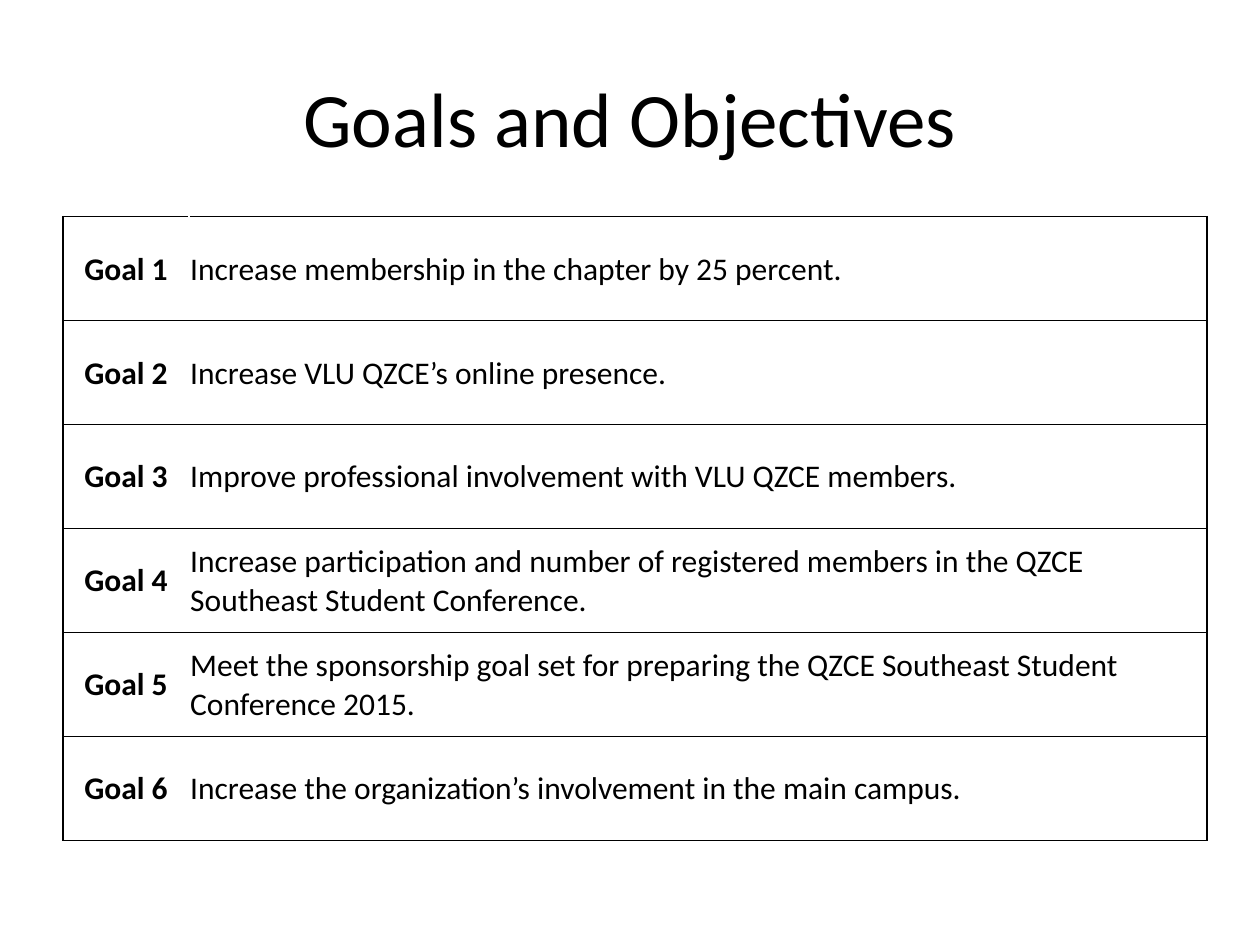
from lxml import etree
from pptx import Presentation
from pptx import util as u
from pptx.dml import color
from pptx.enum import text
from pptx.oxml import ns

COLORS = {"ink": "000000", "paper": "FFFFFF"}
FONT = "Calibri"
GOALS = [
    "Increase membership in the chapter by 25 percent.",
    "Increase VLU QZCE’s online presence.",
    "Improve professional involvement with VLU QZCE members.",
    "Increase participation and number of registered members in the QZCE Southeast Student Conference.",
    "Meet the sponsorship goal set for preparing the QZCE Southeast Student Conference 2015.",
    "Increase the organization’s involvement in the main campus.",
]
LABEL_WIDTH = 1
MARGINS = {
    "margin_left": u.Inches(0.01),
    "margin_right": u.Inches(0.01),
    "margin_top": u.Inches(0.01),
    "margin_bottom": 0,
    "vertical_anchor": text.MSO_ANCHOR.MIDDLE,
}
LABEL_EDGES = {"lnL": "ink", "lnR": "paper", "lnT": "ink", "lnB": "ink"}
GOAL_EDGES = {"lnL": "paper", "lnR": "ink", "lnT": "ink", "lnB": "ink"}


def set_values(target, values):
    for name, value in values.items():
        setattr(target, name, value)


def write_text(frame, words, size, align, bold=False):
    para = frame.paragraphs[0]
    para.alignment = align
    span = para.add_run()
    span.text = words
    set_values(span.font, {"name": FONT, "size": u.Pt(size), "bold": bold})
    span.font.color.rgb = color.RGBColor.from_string(COLORS["ink"])


def set_edges(cell, edges):
    properties = cell._tc.get_or_add_tcPr()
    for side, shade in edges.items():
        line = etree.SubElement(properties, ns.qn(f"a:{side}"), w=str(u.Pt(1)))
        fill = etree.SubElement(line, ns.qn("a:solidFill"))
        etree.SubElement(fill, ns.qn("a:srgbClr"), val=COLORS[shade])


def fill_cell(cell, words, align, bold, edges):
    set_values(cell, MARGINS)
    set_edges(cell, edges)
    cell.fill.solid()
    cell.fill.fore_color.rgb = color.RGBColor.from_string(COLORS["paper"])
    write_text(cell.text_frame, words, 18, align, bold)


def place_title(page, box):
    title = page.shapes.title
    set_values(title, dict(zip(("left", "top", "width", "height"), map(u.Inches, box))))
    title.text_frame.vertical_anchor = text.MSO_ANCHOR.MIDDLE
    write_text(title.text_frame, "Goals and Objectives", 44, text.PP_ALIGN.CENTER)


def place_goals(page, box):
    width, height = box[2:]
    table = page.shapes.add_table(len(GOALS), 2, *map(u.Inches, box)).table
    set_values(table, {"first_row": False, "horz_banding": False})
    for column, size in zip(table.columns, (LABEL_WIDTH, width - LABEL_WIDTH)):
        column.width = u.Inches(size)
    for number, (row, goal) in enumerate(zip(table.rows, GOALS), 1):
        row.height = u.Inches(height / len(GOALS))
        label_cell, goal_cell = row.cells
        fill_cell(label_cell, f"Goal {number}", text.PP_ALIGN.CENTER, True, LABEL_EDGES)
        fill_cell(goal_cell, goal, text.PP_ALIGN.LEFT, False, GOAL_EDGES)


def main():
    deck = Presentation()
    set_values(deck, {"slide_width": u.Inches(10), "slide_height": u.Inches(7.5)})
    page = deck.slides.add_slide(deck.slide_layouts.get_by_name("Title Only"))
    place_title(page, (0.5, 0.3, 9, 1.25))
    place_goals(page, (0.5, 1.72, 9.08, 4.95))
    deck.save("out.pptx")


if __name__ == "__main__":
    main()
